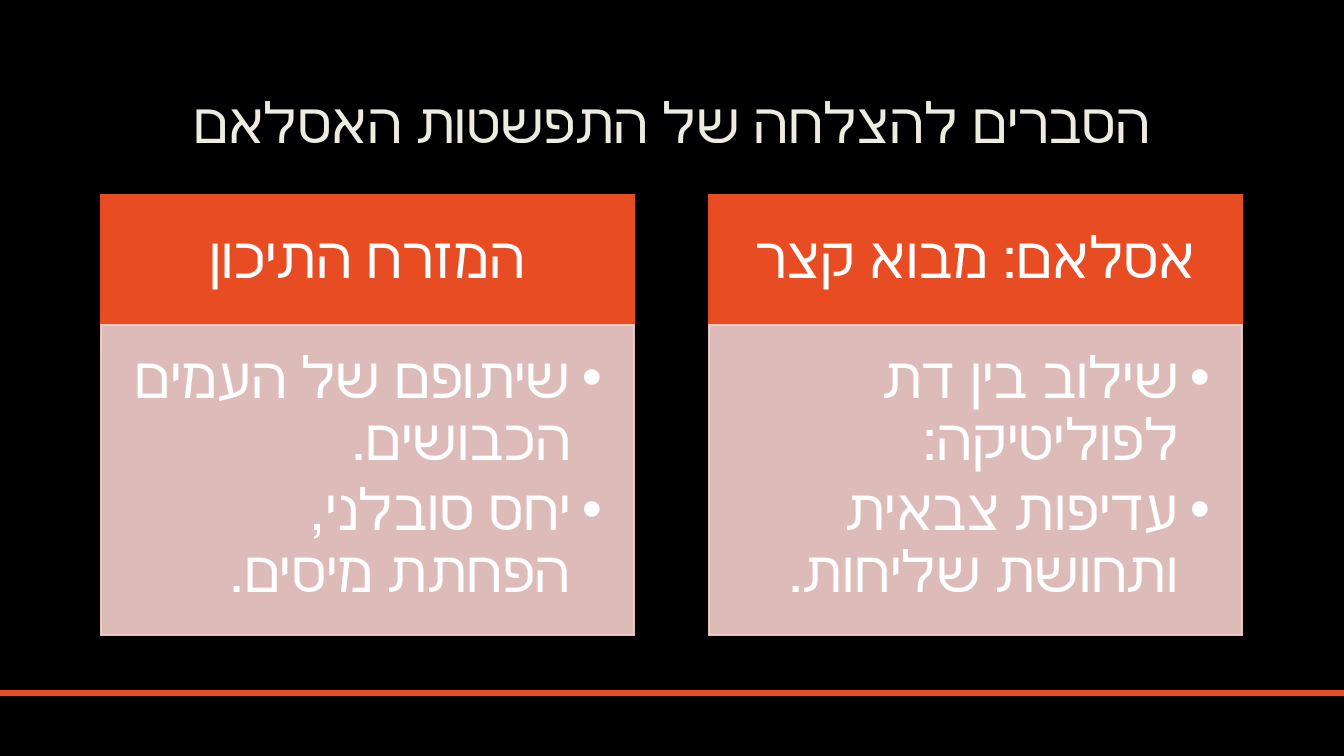
from lxml.etree import SubElement
from pptx import Presentation
from pptx.dml.color import RGBColor
from pptx.enum.shapes import MSO_SHAPE
from pptx.enum.text import MSO_ANCHOR, MSO_AUTO_SIZE, PP_ALIGN
from pptx.oxml import parse_xml
from pptx.oxml.ns import nsdecls, qn
from pptx.util import Pt

SLIDE_WIDTH, SLIDE_HEIGHT = 1344, 756
EMU_PER_PX = 12192000 / SLIDE_WIDTH
FONT = "Lato"
COLORS = {
    "background": "000000",
    "title": "EEECE1",
    "title_outline": "404040",
    "accent": "E84C22",
    "panel": "F6D0CD",
    "text": "FFFFFF",
}
TITLE = "הסברים להצלחה של התפשטות האסלאם"
COLUMNS = [
    ("המזרח התיכון", ["שיתופם של העמים הכבושים.", "יחס סובלני, הפחתת מיסים."]),
    ("אסלאם: מבוא קצר", ["שילוב בין דת לפוליטיקה:", "עדיפות צבאית ותחושת שליחות."]),
]


def px(length):
    return round(length * EMU_PER_PX)


def color(name):
    return RGBColor.from_string(COLORS[name])


def place(shape, box):
    shape.left, shape.top, shape.width, shape.height = map(px, box)


def paint(shape, name, opacity=100):
    """Give fill and a sharp-cornered line the same colour."""
    shape.fill.solid()
    shape.fill.fore_color.rgb = color(name)
    shape.line.color.rgb = color(name)
    shape.line.width = Pt(1.25)
    SubElement(shape.element.spPr.find(qn("a:ln")), qn("a:miter")).set("lim", "800000")
    if opacity < 100:
        for tint in shape.element.spPr.iter(qn("a:srgbClr")):
            SubElement(tint, qn("a:alpha")).set("val", str(opacity * 1000))


def write(shape, lines, size, color_name, align, anchor, insets, space_after=0, spacing=0.9):
    """Fill a placeholder with right-to-left paragraphs; insets run left, top, right, bottom."""
    frame = shape.text_frame
    frame.text = "\n".join(lines)
    frame.word_wrap = True
    frame.auto_size = MSO_AUTO_SIZE.NONE
    frame.vertical_anchor = anchor
    (frame.margin_left, frame.margin_top,
     frame.margin_right, frame.margin_bottom) = map(px, insets)
    for paragraph in frame.paragraphs:
        paragraph.alignment = align
        paragraph.line_spacing = spacing
        paragraph.space_before = Pt(0)
        paragraph.space_after = Pt(space_after)
        paragraph._p.get_or_add_pPr().set("rtl", "1")
        for run in paragraph.runs:
            run.font.size = Pt(size)
            run.font.bold = False
            run.font.name = FONT
            run.font.color.rgb = color(color_name)


def add_title(title, box):
    place(title, box)
    write(title, [TITLE], 40, "title", PP_ALIGN.CENTER, MSO_ANCHOR.MIDDLE,
          (10, 5, 10, 5), spacing=1.0)
    outline = parse_xml(
        f'<a:ln {nsdecls("a")} w="9525"><a:solidFill><a:srgbClr val="{COLORS["title_outline"]}">'
        '<a:alpha val="10000"/></a:srgbClr></a:solidFill></a:ln>')
    title.text_frame.paragraphs[0].runs[0].font._element.insert(0, outline)


def add_column(heading, points, heading_text, point_texts, box):
    left, top, width, height = box
    heading_height = 130
    place(heading, (left, top, width, heading_height))
    paint(heading, "accent")
    write(heading, [heading_text], 41, "text", PP_ALIGN.CENTER, MSO_ANCHOR.MIDDLE,
          (32, 18, 32, 18), space_after=14)

    place(points, (left, top + heading_height, width, height - heading_height))
    paint(points, "panel", opacity=90)
    write(points, point_texts, 41, "text", PP_ALIGN.RIGHT, MSO_ANCHOR.TOP,
          (24, 24, 32, 36), space_after=6)
    for paragraph in points.text_frame.paragraphs:
        properties = paragraph._p.get_or_add_pPr()
        properties.set("marL", str(px(31)))
        properties.set("indent", str(px(-31)))
        SubElement(properties, qn("a:buChar")).set("char", "•")


def add_footer_rule(slide, box):
    rule = slide.shapes.add_shape(MSO_SHAPE.RECTANGLE, *map(px, box))
    rule.shadow.inherit = False
    rule.fill.solid()
    rule.fill.fore_color.rgb = color("accent")
    rule.line.fill.background()


def add_comparison_slide(presentation):
    slide = presentation.slides.add_slide(
        presentation.slide_layouts.get_by_name("Comparison"))
    slide.background.fill.solid()
    slide.background.fill.fore_color.rgb = color("background")

    margin, column_width, gap = 101, 533, 75
    add_title(slide.shapes.title, (margin, 68, SLIDE_WIDTH - 2 * margin, 107))
    _, *bodies = slide.placeholders
    for index, (heading_text, point_texts) in enumerate(COLUMNS):
        heading, points = bodies[2 * index:2 * index + 2]
        left = margin + index * (column_width + gap)
        add_column(heading, points, heading_text, point_texts,
                   (left, 195, column_width, 440))
    add_footer_rule(slide, (0, 690, SLIDE_WIDTH, 6))


def main():
    presentation = Presentation()
    presentation.slide_width = px(SLIDE_WIDTH)
    presentation.slide_height = px(SLIDE_HEIGHT)
    add_comparison_slide(presentation)
    presentation.save("out.pptx")


if __name__ == "__main__":
    main()
